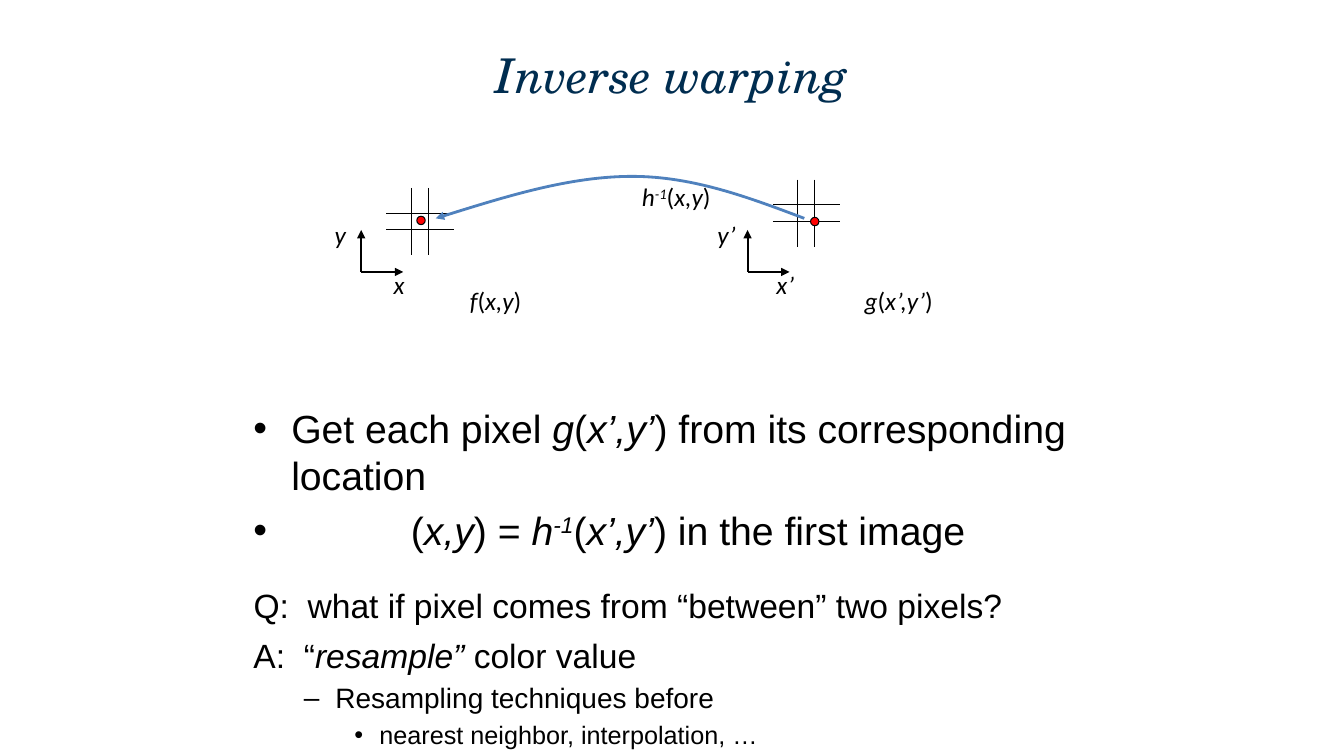
"""Build the slide on inverse warping."""
from lxml import etree
from pptx import Presentation
from pptx.dml.color import RGBColor
from pptx.enum import shapes, text
from pptx.oxml import ns
from pptx.util import Emu, Pt

PX = 9525
SIZE = (1280, 720)


class Theme:
    """Colours, fonts and type sizes."""
    navy, black, blue, red = (
        RGBColor.from_string(c) for c in ("002D50", "000000", "4F81BD", "FF0000"))
    serif, sans, label = "TeX Gyre Schola", "Arial", "Calibri"
    title, body, note, sub, small, tag = 34.2, 28, 24, 20, 18, 18
    thin, axis, curve = 0.75, 1.5, 2


# In text, | switches italic on and off and ^ switches superscript.
TITLE = ((64, 36, 1152, 70), "|Inverse warping")
LABELS = [
    ((416, 267, 112, 38), "|f|(|x,y|)"),
    ((784, 267, 144, 38), "|g|(|x’,y’|)"),
    ((288, 204, 72, 38), "|y"),
    ((656, 204, 72, 38), "|y’"),
    ((344, 252, 72, 38), "|x"),
    ((712, 252, 72, 38), "|x’"),
    ((584, 168, 120, 38), "|h^-1^|(|x,y|)"),
]
BLOCKS = [
    ((232, 380, 816, 208), [
        ("Get each pixel |g|(|x’,y’|) from its corresponding location",
         Theme.body, 0, 36, 36, "•"),
        ("(|x,y|) = |h^-1^|(|x’,y’|) in the first image",
         Theme.body, 0, 150, 150, "•")]),
    ((232, 552, 840, 96), [
        ("Q:  what if pixel comes from “between” two pixels?",
         Theme.note, 0, 36, 36, None)]),
    ((232, 600, 816, 96), [
        ("A:  “|resample” |color value", Theme.note, 0, 36, 36, None),
        ("Resampling techniques before", Theme.sub, 1, 78, 30, "–"),
        ("nearest neighbor, interpolation, …", Theme.small, 2, 120, 24, "•")]),
]
GRIDS = [(368, 179), (736, 171)]
SPAN, GAPS = 64, (24, 40)
AXES = [(344, 259), (712, 259)]
REACH = 40
DOTS = [(772, 207), (397, 206)]
DOT = 8
CURVE = [(415, 208), (479, 188), (543, 168), (602, 168),
         (660, 168), (713, 188), (766, 208)]


def px(*vals):
    """Turn px into EMU."""
    return [Emu(v * PX) for v in vals]


def child(node, tag, **attrs):
    """Append a drawing element."""
    return etree.SubElement(node, ns.qn("a:" + tag), attrs)


def write(para, words, *, size, font, color=Theme.black, align=None, before=0,
          level=0, left=0, hang=0, mark=None):
    """Fill one paragraph with formatted text."""
    para.level, para.alignment, para.space_before = level, align, Pt(before)
    props = para._p.get_or_add_pPr()
    props.set("marL", str(left * PX))
    props.set("indent", str(-hang * PX))
    if mark:
        child(props, "buFont", typeface=Theme.sans)
        child(props, "buChar", char=mark)
    else:
        child(props, "buNone")
    for i, part in enumerate(words.split("|")):
        for j, bit in enumerate(part.split("^")):
            if not bit:
                continue
            run = para.add_run()
            run.text = bit
            face = run.font
            face.name, face.size, face.italic = font, Pt(size), i % 2 == 1
            face.color.rgb = color
            if j % 2:
                run._r.get_or_add_rPr().set("baseline", "30000")


def frame(slide, box):
    """Add a wrapping text box."""
    body = slide.shapes.add_textbox(*px(*box)).text_frame
    body.word_wrap = True
    return body


def flat(shape, color, width, end=None):
    """Style an outline without a shadow, with an optional arrowhead."""
    shape.line.color.rgb, shape.line.width = color, Pt(width)
    if end:
        child(shape.line._get_or_add_ln(), end, type="triangle")
    if not shape._element.spPr.findall(ns.qn("a:effectLst")):
        child(shape._element.spPr, "effectLst")


def line(slide, ends, width, end=None):
    """Draw a straight black line."""
    flat(slide.shapes.add_connector(shapes.MSO_CONNECTOR.STRAIGHT, *px(*ends)),
         Theme.black, width, end)


def bend(slide):
    """Draw the curved arrow from the second image to the first."""
    pen = slide.shapes.build_freeform(*CURVE[0], scale=PX)
    pen.add_line_segments(CURVE[1:], close=False)
    arc = pen.convert_to_shape()
    route = next(arc._element.iter(ns.qn("a:path")))
    steps = route.findall(ns.qn("a:lnTo"))
    for i in range(0, len(steps), 3):
        cubic = child(route, "cubicBezTo")
        for step in steps[i:i + 3]:
            cubic.append(step[0])
            route.remove(step)
    arc.fill.background()
    arc.shadow.inherit = False
    flat(arc, Theme.blue, Theme.curve, "headEnd")


def main():
    """Compose and save the slide."""
    deck = Presentation()
    deck.slide_width, deck.slide_height = px(*SIZE)
    slide = deck.slides.add_slide(deck.slide_layouts[6])
    for x, y in GRIDS:
        for gap in GAPS:
            line(slide, (x + gap, y, x + gap, y + SPAN), Theme.thin)
            line(slide, (x, y + gap, x + SPAN, y + gap), Theme.thin)
    for x, y in AXES:
        for dx, dy in ((0, -REACH), (REACH, 0)):
            line(slide, (x, y, x + dx, y + dy), Theme.axis, "tailEnd")
    bend(slide)
    for x, y in DOTS:
        dot = slide.shapes.add_shape(shapes.MSO_SHAPE.OVAL, *px(x, y, DOT, DOT))
        dot.fill.solid()
        dot.fill.fore_color.rgb = Theme.red
        dot.shadow.inherit = False
        flat(dot, Theme.black, Theme.thin)
    mid = text.PP_ALIGN.CENTER
    box, words = TITLE
    head = frame(slide, box)
    head.vertical_anchor = text.MSO_ANCHOR.MIDDLE
    write(head.paragraphs[0], words, size=Theme.title, font=Theme.serif,
          color=Theme.navy, align=mid)
    for box, words in LABELS:
        write(frame(slide, box).paragraphs[0], words, size=Theme.tag,
              font=Theme.label, align=mid)
    for box, rows in BLOCKS:
        body = frame(slide, box)
        for i, (words, size, level, left, hang, mark) in enumerate(rows):
            para = body.add_paragraph() if i else body.paragraphs[0]
            write(para, words, size=size, font=Theme.sans, level=level,
                  left=left, hang=hang, mark=mark, before=size / 5 if i else 0)
    deck.save("out.pptx")


if __name__ == "__main__":
    main()
